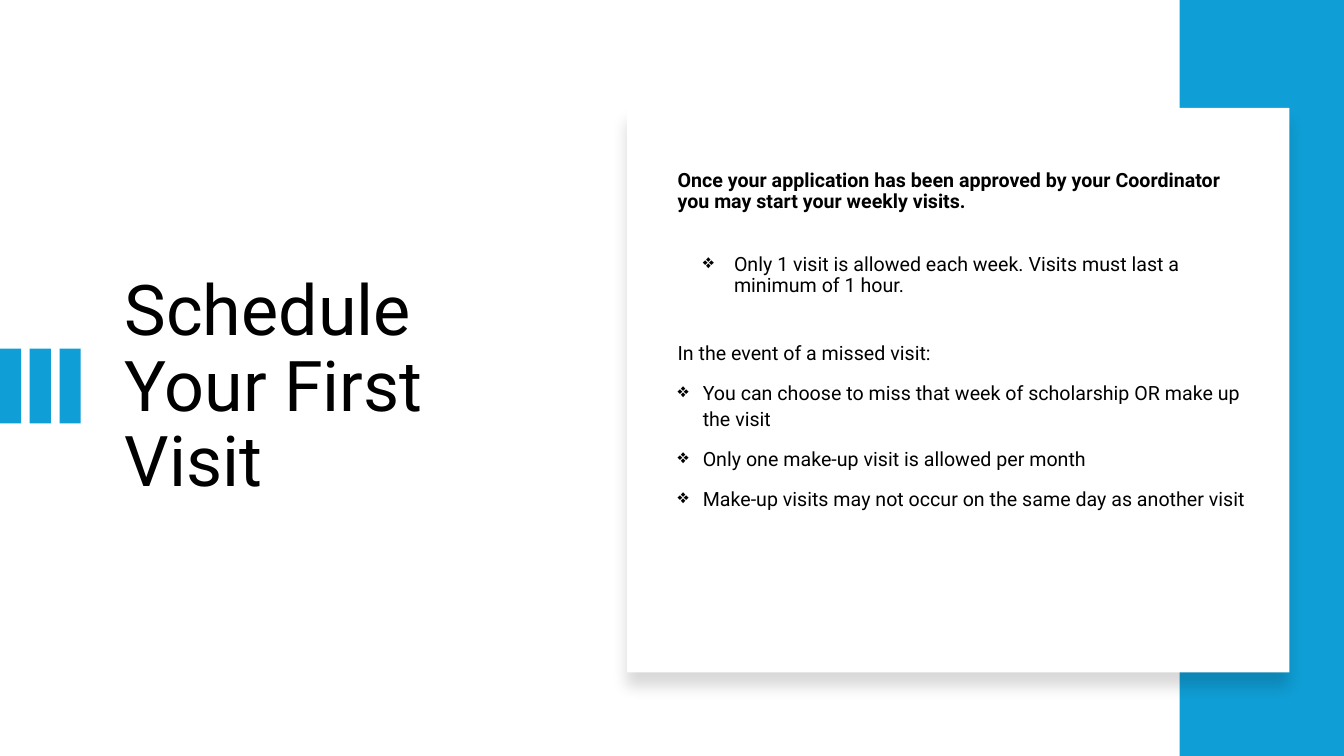
from dataclasses import dataclass

from lxml.etree import SubElement
from pptx import Presentation
from pptx.dml.color import RGBColor
from pptx.enum.shapes import MSO_SHAPE
from pptx.enum.text import MSO_ANCHOR
from pptx.oxml.ns import qn
from pptx.shapes.autoshape import Shape
from pptx.slide import Slide
from pptx.text.text import TextFrame, _Paragraph
from pptx.util import Inches, Pt


@dataclass(frozen=True)
class Theme:
    font: str = "Roboto"
    title_size: int = 50
    body_size: int = 14
    accent: RGBColor = RGBColor(0x0F, 0x9E, 0xD5)
    card: RGBColor = RGBColor(0xFF, 0xFF, 0xFF)
    text: RGBColor = RGBColor(0, 0, 0)


@dataclass(frozen=True)
class Box:
    left: float
    top: float
    width: float
    height: float

    def lengths(self) -> list[int]:
        return [Inches(v) for v in (self.left, self.top, self.width, self.height)]


@dataclass(frozen=True)
class Line:
    text: str
    size: int = Theme.body_size
    bold: bool = False
    level: int = 0
    bulleted: bool = False
    indent: float = 0.25
    hanging: float = 0.25
    spacing: float = 1.1
    before: int = 10


THEME = Theme()
STRIPES = [Box(i * 0.59 / 2, 3.46, 0.21, 0.74) for i in range(3)]
SIDE_BAND = Box(11.7, 0, 1.63, 7.5)
CARD = Box(6.22, 1.07, 6.57, 5.6)
TITLE = Box(1.14, 1.46, 4.26, 4.79)
RULES = Box(6.67, 1.46, 5.75, 3.83)

TITLE_LINES = [
    Line("Schedule Your First Visit", size=THEME.title_size, spacing=0.9, before=0),
]
RULE_LINES = [
    Line("Once your application has been approved by your Coordinator "
         "you may start your weekly visits.", bold=True, spacing=0.9, before=0),
    Line("Only 1 visit is allowed each week. Visits must last a minimum of 1 hour.",
         level=1, bulleted=True, indent=0.56, hanging=0.31, spacing=0.9, before=30),
    Line("In the event of a missed visit:", before=30),
    Line("You can choose to miss that week of scholarship OR make up the visit",
         bulleted=True),
    Line("Only one make-up visit is allowed per month", bulleted=True),
    Line("Make-up visits may not occur on the same day as another visit",
         bulleted=True),
]


def add_panel(slide: Slide, box: Box, fill: RGBColor) -> Shape:
    panel = slide.shapes.add_shape(MSO_SHAPE.RECTANGLE, *box.lengths())
    panel.shadow.inherit = False
    panel.fill.solid()
    panel.fill.fore_color.rgb = fill
    panel.line.fill.background()
    return panel


def add_drop_shadow(panel: Shape) -> None:
    effects = panel._element.spPr.find(qn("a:effectLst"))
    shadow = SubElement(effects, qn("a:outerShdw"), blurRad=str(Pt(11)),
                        dist=str(Pt(10)), dir=str(90 * 60000), algn="t",
                        rotWithShape="0")
    color = SubElement(shadow, qn("a:srgbClr"), val="000000")
    SubElement(color, qn("a:alpha"), val="15000")


def add_bullet(paragraph: _Paragraph, line: Line) -> None:
    properties = paragraph._p.get_or_add_pPr()
    properties.set("marL", str(Inches(line.indent)))
    properties.set("indent", str(-Inches(line.hanging)))
    SubElement(properties, qn("a:buChar"), char="❖")


def write_line(paragraph: _Paragraph, line: Line) -> None:
    paragraph.text = line.text
    paragraph.level = line.level
    if line.bulleted:
        add_bullet(paragraph, line)
    paragraph.line_spacing = line.spacing
    paragraph.space_before = Pt(line.before)
    font = paragraph.font
    font.name = THEME.font
    font.size = Pt(line.size)
    font.bold = line.bold
    font.color.rgb = THEME.text


def add_text(slide: Slide, box: Box, lines: list[Line]) -> TextFrame:
    frame = slide.shapes.add_textbox(*box.lengths()).text_frame
    frame.word_wrap = True
    frame.vertical_anchor = MSO_ANCHOR.MIDDLE
    for index, line in enumerate(lines):
        write_line(frame.add_paragraph() if index else frame.paragraphs[0], line)
    return frame


def main() -> None:
    deck = Presentation()
    deck.slide_width, deck.slide_height = Inches(13.33), Inches(7.5)
    slide = deck.slides.add_slide(deck.slide_layouts[6])

    add_text(slide, TITLE, TITLE_LINES)
    for box in [*STRIPES, SIDE_BAND]:
        add_panel(slide, box, THEME.accent)
    add_drop_shadow(add_panel(slide, CARD, THEME.card))

    rules = add_text(slide, RULES, RULE_LINES)
    rules.margin_left = rules.margin_right = Inches(0.05)
    deck.save("out.pptx")


if __name__ == "__main__":
    main()
